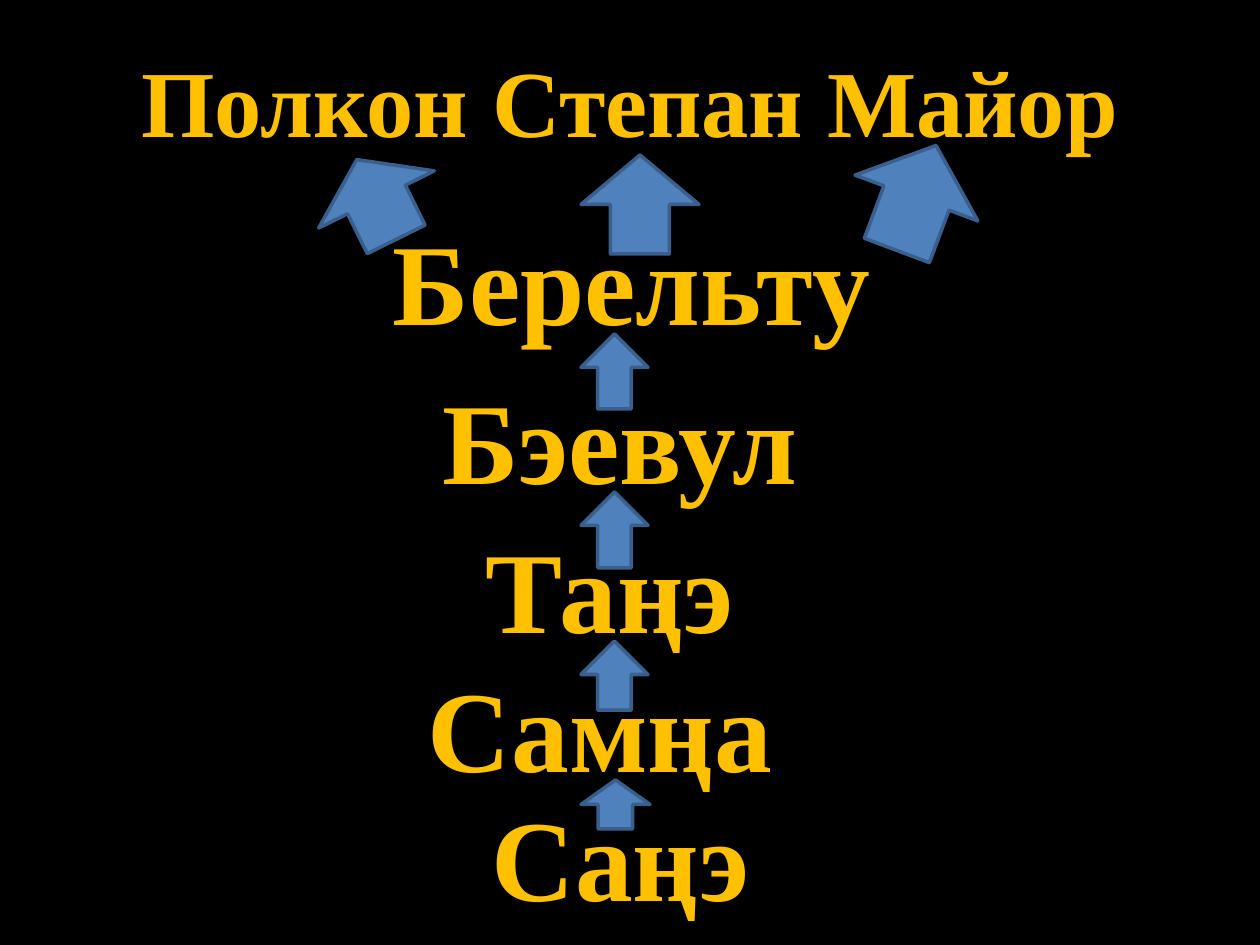
from dataclasses import dataclass

from pptx import Presentation
from pptx.dml.color import RGBColor
from pptx.enum.shapes import MSO_SHAPE
from pptx.enum.text import MSO_ANCHOR, MSO_AUTO_SIZE, PP_ALIGN
from pptx.util import Emu, Pt

UP_ARROW = MSO_SHAPE.UP_ARROW
CENTER = PP_ALIGN.CENTER
TOP = MSO_ANCHOR.TOP
FIT_SHAPE = MSO_AUTO_SIZE.SHAPE_TO_FIT_TEXT

BLACK = RGBColor(0x00, 0x00, 0x00)
GOLD = RGBColor(0xFF, 0xC0, 0x00)
BLUE = RGBColor(0x4F, 0x81, 0xBD)
DARK_BLUE = RGBColor(0x3A, 0x5F, 0x8C)

FONT = "Times New Roman"
PX_PER_INCH = 126
NAME_HEIGHT = 152
ARROW_LEFT = 581


@dataclass(frozen=True)
class Arrow:
    left: int
    top: int
    width: int
    height: int
    rotation: float = 0
    shaft: float = 0.5


@dataclass(frozen=True)
class Step:
    name: str
    left: int
    top: int
    width: int
    arrow: Arrow


# Names in the column from bottom to top, each with the arrow above it
STEPS = [
    Step("Саңэ", 412, 780, 417, Arrow(ARROW_LEFT, 780, 69, 49)),
    Step("Самңа", 382, 651, 436, Arrow(ARROW_LEFT, 641, 67, 69)),
    Step("Таңэ", 471, 512, 277, Arrow(ARROW_LEFT, 492, 67, 76)),
    Step("Бэевул", 402, 363, 436, Arrow(ARROW_LEFT, 334, 67, 75)),
    Step("Берельту", 333, 204, 597, Arrow(ARROW_LEFT, 155, 118, 99)),
]
SLANTED_ARROWS = [
    Arrow(312, 155, 129, 89, rotation=333.7),
    Arrow(851, 142, 131, 112, rotation=20.5, shaft=0.53),
]


def px(length: int) -> Emu:
    return Emu(round(length * 914400 / PX_PER_INCH))


def write_name(shape, name: str, size: int) -> None:
    frame = shape.text_frame
    frame.word_wrap = True
    frame.auto_size = FIT_SHAPE
    frame.vertical_anchor = TOP
    paragraph = frame.paragraphs[0]
    paragraph.alignment = CENTER
    run = paragraph.add_run()
    run.text = name
    run.font.name = FONT
    run.font.size = Pt(size)
    run.font.bold = True
    run.font.color.rgb = GOLD


def draw_arrow(slide, arrow: Arrow) -> None:
    shape = slide.shapes.add_shape(
        UP_ARROW, px(arrow.left), px(arrow.top), px(arrow.width), px(arrow.height)
    )
    shape.rotation = arrow.rotation
    shape.adjustments[0] = arrow.shaft
    shape.shadow.inherit = False
    shape.fill.solid()
    shape.fill.fore_color.rgb = BLUE
    shape.line.color.rgb = DARK_BLUE
    shape.line.width = Pt(2)


def draw_step(slide, step: Step) -> None:
    label = slide.shapes.add_textbox(
        px(step.left), px(step.top), px(step.width), px(NAME_HEIGHT)
    )
    write_name(label, step.name, 66)
    draw_arrow(slide, step.arrow)


def main() -> None:
    prs = Presentation()
    prs.slide_width, prs.slide_height = px(1260), px(945)
    slide = prs.slides.add_slide(prs.slide_layouts[5])
    slide.background.fill.solid()
    slide.background.fill.fore_color.rgb = BLACK

    # Row of three names across the top
    top_names = slide.shapes.title
    top_names.left, top_names.top = px(44), px(37)
    top_names.width, top_names.height = px(1171), px(127)
    write_name(top_names, "Полкон Степан Майор", 54)

    # Column of names and upward arrows
    for step in STEPS:
        draw_step(slide, step)

    # Slanted arrows to the first and last top names
    for arrow in SLANTED_ARROWS:
        draw_arrow(slide, arrow)

    prs.save("out.pptx")


if __name__ == "__main__":
    main()
